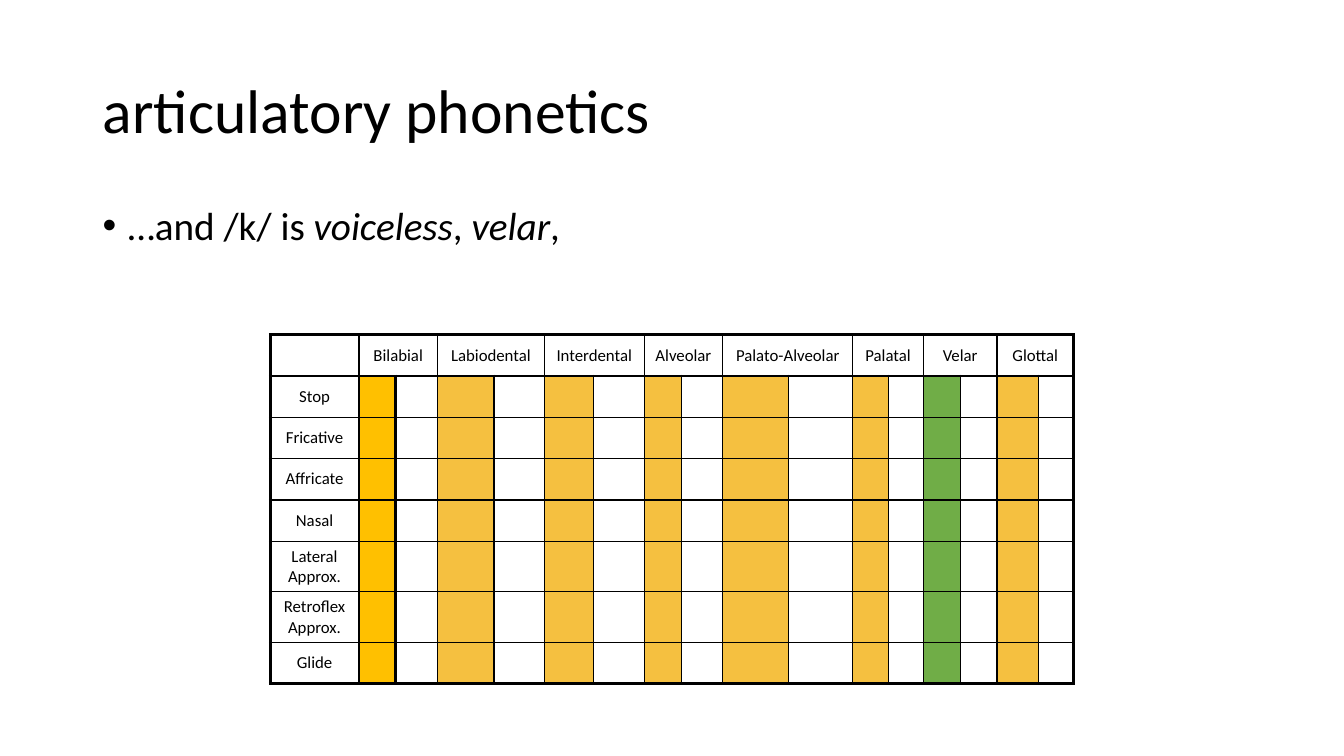
from lxml.etree import SubElement
from pptx import Presentation
from pptx.dml.color import RGBColor
from pptx.enum.text import MSO_ANCHOR, PP_ALIGN
from pptx.oxml.ns import qn
from pptx.util import Inches, Pt

FONT = "Calibri"
COLORS = {"black": "000000", "gold": "FFC000", "amber": "F5C040", "green": "70AD47"}
PLACES = ["Bilabial", "Labiodental", "Interdental", "Alveolar",
          "Palato-Alveolar", "Palatal", "Velar", "Glottal"]
MANNERS = ["Stop", "Fricative", "Affricate", "Nasal",
           "Lateral Approx.", "Retroflex Approx.", "Glide"]
VOICELESS_FILLS = {"Bilabial": "gold", "Velar": "green"}
COLUMN_WIDTHS = [0.88, 0.36, 0.42, 0.56, 0.5, 0.49, 0.5, 0.37, 0.41,
                 0.65, 0.64, 0.35, 0.35, 0.37, 0.36, 0.41, 0.35]
ROW_HEIGHT = 0.41
THIN, THICK = 1, 2.25


def style_font(paragraph, size):
    paragraph.font.name = FONT
    paragraph.font.size = Pt(size)
    paragraph.font.color.rgb = RGBColor.from_string(COLORS["black"])


def add_border(cell, side, width):
    """Draw one side (L, R, T or B) of a cell, width in points."""
    line = SubElement(cell._tc.get_or_add_tcPr(), qn(f"a:ln{side}"), w=str(Pt(width)))
    fill = SubElement(line, qn("a:solidFill"))
    SubElement(fill, qn("a:srgbClr"), val=COLORS["black"])


presentation = Presentation()
presentation.slide_width = Inches(13.33)
presentation.slide_height = Inches(7.5)
slide = presentation.slides.add_slide(presentation.slide_layouts[5])

# Title
title = slide.shapes.title
title.left, title.top = Inches(0.92), Inches(0.4)
title.width, title.height = Inches(11.5), Inches(1.45)
title.text_frame.text = "articulatory phonetics"
title.text_frame.vertical_anchor = MSO_ANCHOR.MIDDLE
paragraph = title.text_frame.paragraphs[0]
paragraph.alignment = PP_ALIGN.LEFT
paragraph.line_spacing = 0.9
style_font(paragraph, 44)

# Bullet
body = slide.shapes.add_textbox(Inches(0.92), Inches(2), Inches(11.5), Inches(4.76))
body.text_frame.word_wrap = True
paragraph = body.text_frame.paragraphs[0]
paragraph.line_spacing = 0.9
paragraph.space_before = Pt(10)
style_font(paragraph, 28)
properties = paragraph._p.get_or_add_pPr()
properties.set("marL", str(Inches(0.25)))
properties.set("indent", str(Inches(-0.25)))
bullet_font = properties.makeelement(qn("a:buFont"), {"typeface": "Arial"})
bullet = properties.makeelement(qn("a:buChar"), {"char": "•"})
default_font = properties.find(qn("a:defRPr"))
default_font.addprevious(bullet_font)
default_font.addprevious(bullet)
for text, italic in [("…and /k/ is ", False), ("voiceless", True), (", ", False),
                     ("velar", True), (",", False)]:
    run = paragraph.add_run()
    run.text = text
    run.font.italic = italic

# Consonant chart: each place of articulation has a voiceless and a voiced column
row_count, column_count = len(MANNERS) + 1, len(COLUMN_WIDTHS)
frame = slide.shapes.add_table(row_count, column_count, Inches(2.68), Inches(3.32),
                               Inches(sum(COLUMN_WIDTHS)), Inches(ROW_HEIGHT * row_count))
table = frame.table
table.first_row = False
table.horz_banding = False
for column, width in zip(table.columns, COLUMN_WIDTHS):
    column.width = Inches(width)
for row in table.rows:
    row.height = Inches(ROW_HEIGHT)

for index, place in enumerate(PLACES):
    first = 1 + 2 * index
    table.cell(0, first).merge(table.cell(0, first + 1))
    table.cell(0, first).text = place
for index, manner in enumerate(MANNERS, start=1):
    table.cell(index, 0).text = manner

for row in range(row_count):
    thick_columns = {0, 1, column_count} | ({2} if row else set())
    for column in range(column_count):
        cell = table.cell(row, column)
        cell.vertical_anchor = MSO_ANCHOR.MIDDLE
        paragraph = cell.text_frame.paragraphs[0]
        paragraph.alignment = PP_ALIGN.CENTER
        style_font(paragraph, 12)
        if not cell.is_spanned:
            right = column + (cell.span_width if cell.is_merge_origin else 1)
            add_border(cell, "L", THICK if column in thick_columns else THIN)
            add_border(cell, "R", THICK if right in thick_columns else THIN)
            add_border(cell, "T", THICK if row in (0, 1) else THIN)
            add_border(cell, "B", THICK if row in (0, row_count - 1) else THIN)
        if row and column % 2:
            color = VOICELESS_FILLS.get(PLACES[column // 2], "amber")
            cell.fill.solid()
            cell.fill.fore_color.rgb = RGBColor.from_string(COLORS[color])
        else:
            cell.fill.background()

presentation.save("out.pptx")
